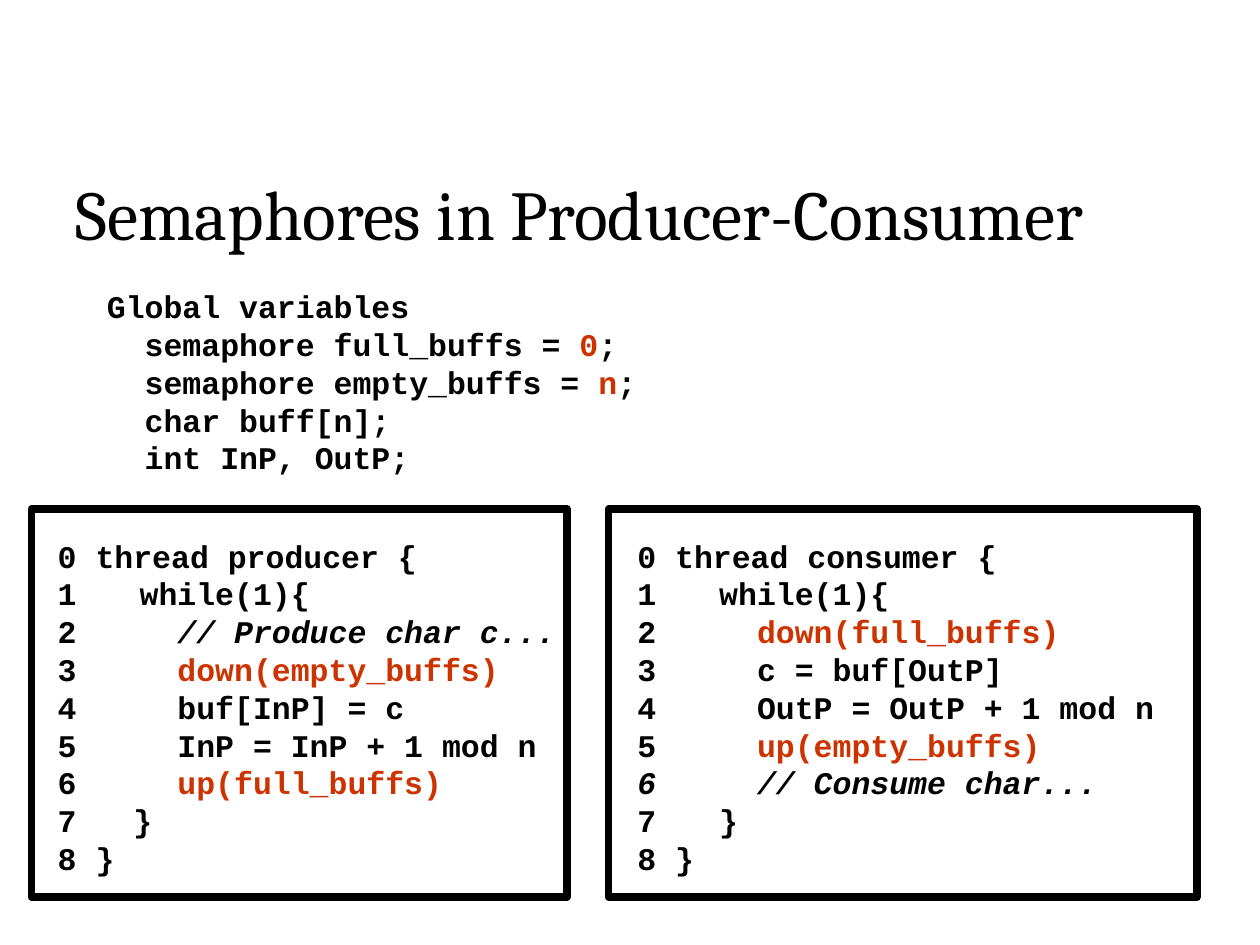
from dataclasses import dataclass
from typing import NamedTuple, Optional

from lxml import etree
from pptx import Presentation
from pptx import util as u
from pptx.dml.color import RGBColor
from pptx.enum import shapes, text
from pptx.oxml import ns


@dataclass(frozen=True)
class Theme:
    ink: RGBColor = RGBColor(0x00, 0x00, 0x00)
    accent: RGBColor = RGBColor(0xCC, 0x33, 0x00)
    paper: RGBColor = RGBColor(0xFF, 0xFF, 0xFF)
    title_font: str = "Cambria"
    code_font: str = "Courier New"
    title_size: u.Pt = u.Pt(40)
    code_size: u.Pt = u.Pt(18)
    frame_width: u.Pt = u.Pt(4.5)
    hanging: u.Inches = u.Inches(0.5)


class Area(NamedTuple):
    """Left, top, width and height in percent of the slide."""
    left: float
    top: float
    width: float
    height: float


class Piece(NamedTuple):
    words: str
    accent: bool = False
    italic: bool = False


class Line(NamedTuple):
    pieces: list[Piece]
    numbered: bool = False


class Thread(NamedTuple):
    frame: Area
    code: Area
    fill: Optional[RGBColor]
    lines: list[Line]


THEME = Theme()
WIDTH, HEIGHT = u.Inches(10), u.Inches(7.5)
STEP = "   "  # code depth inside the while loop


def plain(words: str) -> Line:
    return Line([Piece(words)])


def numbered(words: str) -> Line:
    return Line([Piece(words)], numbered=True)


def call(words: str) -> Line:
    return Line([Piece(STEP), Piece(words, accent=True)], numbered=True)


def declare(name: str, value: str) -> Line:
    return Line([Piece(f"  semaphore {name} = "), Piece(value, accent=True), Piece(";")])


def place(area: Area) -> tuple[int, int, int, int]:
    return (int(WIDTH * area.left / 100), int(HEIGHT * area.top / 100),
            int(WIDTH * area.width / 100), int(HEIGHT * area.height / 100))


def add_title(slide, words: str, area: Area) -> None:
    title = slide.shapes.title
    title.left, title.top, title.width, title.height = place(area)
    frame = title.text_frame
    frame.word_wrap = True
    frame.vertical_anchor = text.MSO_ANCHOR.MIDDLE
    frame.auto_size = text.MSO_AUTO_SIZE.SHAPE_TO_FIT_TEXT
    paragraph = frame.paragraphs[0]
    paragraph.alignment = text.PP_ALIGN.LEFT
    paragraph.line_spacing = 0.9
    run = paragraph.add_run()
    run.text = words
    run.font.name, run.font.size = THEME.title_font, THEME.title_size
    run.font.color.rgb = THEME.ink


def format_paragraph(paragraph, is_numbered: bool) -> None:
    properties = paragraph._p.get_or_add_pPr()
    properties.set("marL", str(THEME.hanging))
    properties.set("indent", str(-THEME.hanging))
    if is_numbered:
        bullet = etree.SubElement(properties, ns.qn("a:buAutoNum"))
        bullet.set("type", "arabicPlain")
    else:
        etree.SubElement(properties, ns.qn("a:buNone"))


def add_code(slide, area: Area, lines: list[Line]) -> None:
    frame = slide.shapes.add_textbox(*place(area)).text_frame
    frame.word_wrap = True
    frame.auto_size = text.MSO_AUTO_SIZE.SHAPE_TO_FIT_TEXT
    for index, line in enumerate(lines):
        paragraph = frame.add_paragraph() if index else frame.paragraphs[0]
        format_paragraph(paragraph, line.numbered)
        for piece in line.pieces:
            run = paragraph.add_run()
            run.text = piece.words
            run.font.name, run.font.size = THEME.code_font, THEME.code_size
            run.font.bold, run.font.italic = True, piece.italic
            run.font.color.rgb = THEME.accent if piece.accent else THEME.ink


def add_frame(slide, area: Area, fill: Optional[RGBColor]) -> None:
    shape = slide.shapes.add_shape(shapes.MSO_SHAPE.RECTANGLE, *place(area))
    shape.shadow.inherit = False
    if fill is None:
        shape.fill.background()
    else:
        shape.fill.solid()
        shape.fill.fore_color.rgb = fill
    shape.line.color.rgb = THEME.ink
    shape.line.width = THEME.frame_width


GLOBALS = [
    plain("Global variables"),
    declare("full_buffs", "0"),
    declare("empty_buffs", "n"),
    plain("  char buff[n];"),
    plain("  int InP, OutP;"),
]

# Both threads share the same rows
FRAME_TOP, FRAME_HEIGHT = 53.87, 41.07
CODE_TOP, CODE_HEIGHT = 56.13, 37.33

PRODUCER = Thread(
    Area(2.5, FRAME_TOP, 42.5, FRAME_HEIGHT),
    Area(3.6, CODE_TOP, 43.9, CODE_HEIGHT),
    THEME.paper,
    [
        plain("0 thread producer {"),
        numbered(" while(1){"),
        Line([Piece(STEP), Piece("// Produce char c...", italic=True)], numbered=True),
        call("down(empty_buffs)"),
        numbered(STEP + "buf[InP] = c"),
        numbered(STEP + "InP = InP + 1 mod n"),
        call("up(full_buffs)"),
        plain("7   }"),
        plain("8 }"),
    ],
)

CONSUMER = Thread(
    Area(48.3, FRAME_TOP, 46.7, FRAME_HEIGHT),
    Area(49.6, CODE_TOP, 48.9, CODE_HEIGHT),
    None,
    [
        plain("0 thread consumer {"),
        numbered(" while(1){"),
        call("down(full_buffs)"),
        numbered(STEP + "c = buf[OutP]"),
        numbered(STEP + "OutP = OutP + 1 mod n"),
        call("up(empty_buffs)"),
        Line([Piece(STEP + "// Consume char...", italic=True)], numbered=True),
        numbered(" }"),
        plain("8 }"),
    ],
)


def main() -> None:
    presentation = Presentation()
    presentation.slide_width, presentation.slide_height = WIDTH, HEIGHT
    slide = presentation.slides.add_slide(presentation.slide_layouts[5])

    # Heading and shared variables
    add_title(slide, "Semaphores in Producer-Consumer", Area(5, 18.27, 95, 9.6))
    add_code(slide, Area(7.5, 29.73, 63.3, 21.33), GLOBALS)

    # Framed thread listings
    for thread in (PRODUCER, CONSUMER):
        add_frame(slide, thread.frame, thread.fill)
        add_code(slide, thread.code, thread.lines)

    presentation.save("out.pptx")


if __name__ == "__main__":
    main()
